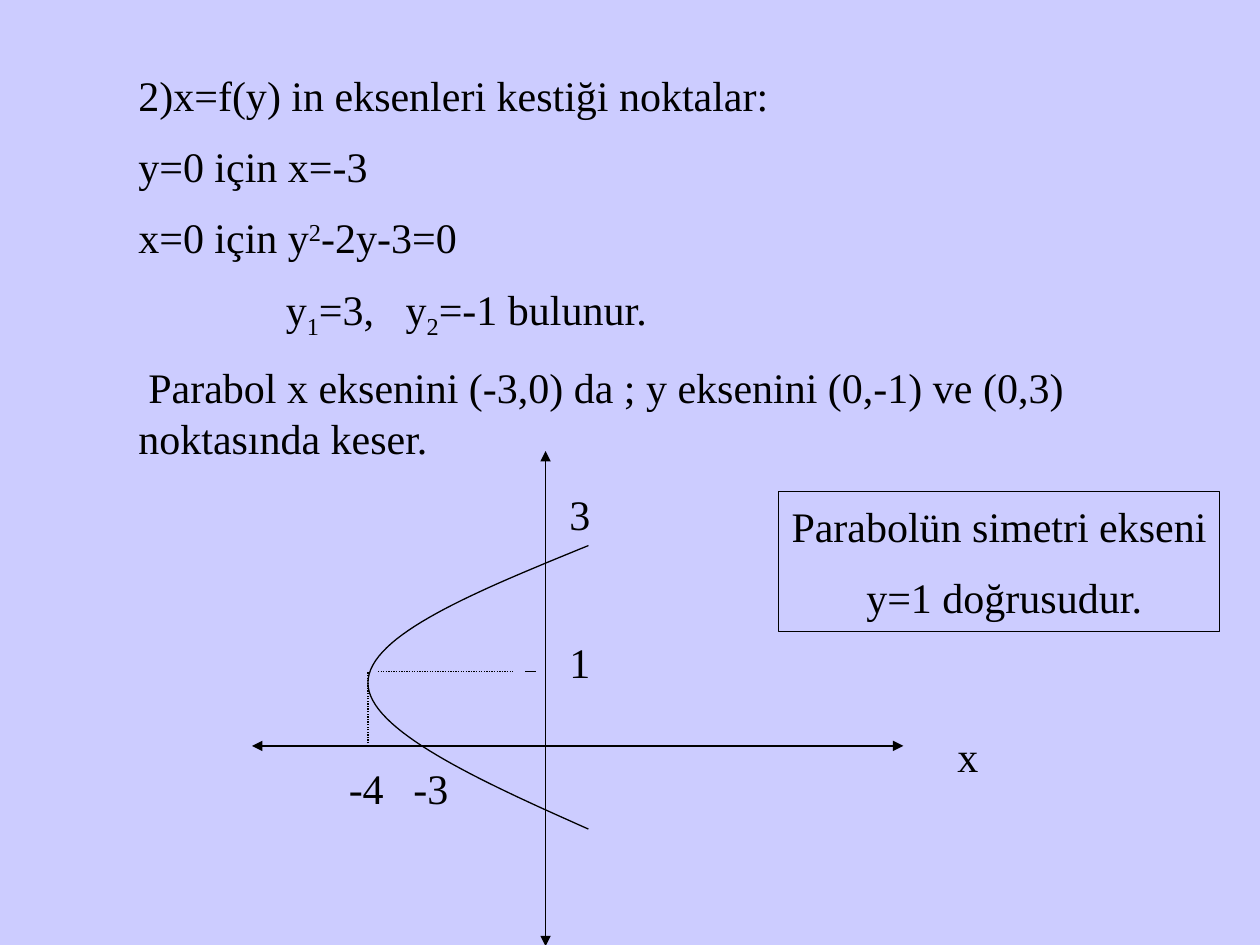
from lxml.etree import SubElement
from pptx import Presentation
from pptx.dml.color import RGBColor
from pptx.enum.dml import MSO_LINE
from pptx.enum.shapes import MSO_CONNECTOR, MSO_SHAPE
from pptx.enum.text import MSO_ANCHOR, PP_ALIGN
from pptx.oxml.ns import qn
from pptx.util import Inches, Pt

BLACK = "000000"
LAVENDER = "CCCCFF"
FONT = "Times New Roman"
PLAIN = {}
SUPER = {"baseline": "30000"}
SUB = {"baseline": "-25000"}
WIDE = {"spc": "1200"}


def color(hex_code):
    return RGBColor.from_string(hex_code)


def style_line(line, dash=None):
    line.color.rgb = color(BLACK)
    line.width = Pt(0.75)
    if dash:
        line.dash_style = dash


def set_indent(paragraph, margin=0, first=0):
    """Set the left margin and first-line indent, in inches."""
    props = paragraph._p.get_or_add_pPr()
    props.set("marL", str(Inches(margin)))
    props.set("indent", str(Inches(first)))


def write(frame, lines, size=24, align=PP_ALIGN.LEFT, anchor=MSO_ANCHOR.TOP,
          wrap=True, indents=None):
    """Write lines, each a string or a list of (text, run attributes)."""
    frame.word_wrap = wrap
    frame.vertical_anchor = anchor
    for index, line in enumerate(lines):
        paragraph = frame.paragraphs[0] if index == 0 else frame.add_paragraph()
        paragraph.alignment = align
        if index:
            paragraph.space_before = Pt(size / 2)
        if indents and index in indents:
            set_indent(paragraph, **indents[index])
        for text, attributes in [(line, PLAIN)] if isinstance(line, str) else line:
            run = paragraph.add_run()
            run.text = text
            run.font.name = FONT
            run.font.size = Pt(size)
            run.font.color.rgb = color(BLACK)
            for name, value in attributes.items():
                run._r.get_or_add_rPr().set(name, value)


def add_text(slide, box, lines, **text_format):
    frame = slide.shapes.add_textbox(*map(Inches, box)).text_frame
    write(frame, lines, **text_format)


def add_line(slide, start, end, dash=None, arrow=False):
    line = slide.shapes.add_connector(
        MSO_CONNECTOR.STRAIGHT, *map(Inches, start + end))
    style_line(line.line, dash)
    if arrow:
        SubElement(line.line._get_or_add_ln(), qn("a:tailEnd"), type="triangle")
    SubElement(line._element.spPr, qn("a:effectLst"))


def bezier(points, steps=32):
    """Return points in EMU along a cubic Bezier curve given in inches."""
    curve = []
    for step in range(steps + 1):
        t = step / steps
        weights = ((1 - t) ** 3, 3 * t * (1 - t) ** 2, 3 * t * t * (1 - t), t ** 3)
        curve.append(tuple(Inches(sum(w * p[axis] for w, p in zip(weights, points)))
                           for axis in (0, 1)))
    return curve


def add_parabola(slide):
    vertex = (2.92, 5.42)
    upper = bezier([(4.67, 4.33), (3.79, 4.69), (2.92, 5.04), vertex])
    lower = bezier([vertex, (2.92, 5.79), (3.79, 6.19), (4.67, 6.58)])
    start, *rest = upper + lower[1:]
    builder = slide.shapes.build_freeform(*start)
    builder.add_line_segments(rest, close=False)
    parabola = builder.convert_to_shape()
    parabola.shadow.inherit = False
    parabola.fill.background()
    style_line(parabola.line)


def add_framed_note(slide, box, lines, **text_format):
    note = slide.shapes.add_shape(MSO_SHAPE.RECTANGLE, *map(Inches, box))
    note.shadow.inherit = False
    note.fill.background()
    style_line(note.line)
    write(note.text_frame, lines, **text_format)


def add_graph(slide):
    axis_x, axis_y, symmetry_y = 4.33, 5.92, 5.33
    for start, end in (((axis_x, 4.51), (axis_x, 7.51)),
                       ((2.75, axis_y), (7.17, axis_y)),
                       ((2.83, axis_y), (2, axis_y)),
                       ((axis_x, 4.67), (axis_x, 3.58))):
        add_line(slide, start, end, arrow=True)

    dotted = MSO_LINE.ROUND_DOT
    add_line(slide, (2.92, axis_y), (2.92, symmetry_y), dash=dotted)
    add_line(slide, (3, symmetry_y), (4.08, symmetry_y), dash=dotted)
    add_line(slide, (4.25, symmetry_y), (4.17, symmetry_y))
    add_parabola(slide)

    for label, left, top, width in (("3", 4.42, 3.83, 0.58),
                                    ("1", 4.42, 5, 0.67),
                                    ("-4", 2.67, 6, 1),
                                    ("x", 7.5, 5.75, 0.67)):
        add_text(slide, (left, top, width, 0.5), [label])
    add_text(slide, (3.18, 6, 0.48, 0.5), ["-3"], align=PP_ALIGN.CENTER,
             anchor=MSO_ANCHOR.MIDDLE, wrap=False)


def main():
    deck = Presentation()
    deck.slide_width, deck.slide_height = Inches(10), Inches(7.5)
    slide = deck.slides.add_slide(deck.slide_layouts[6])
    slide.background.fill.solid()
    slide.background.fill.fore_color.rgb = color(LAVENDER)

    add_text(slide, (1, 0.5, 7.83, 5.09), [
        "2)x=f(y) in eksenleri kestiği noktalar:",
        "y=0 için x=-3",
        [("x=0 için y", PLAIN), ("2", SUPER), ("-2y-3=0", PLAIN)],
        [("y", PLAIN), ("1", SUB), ("=3,", PLAIN), (" ", WIDE),
         ("y", PLAIN), ("2", SUB), ("=-1 bulunur.", PLAIN)],
        "Parabol x eksenini (-3,0) da ; y eksenini (0,-1) ve (0,3) "
        "noktasında keser.",
    ], indents={3: {"margin": 1.17}, 4: {"first": 0.08}})
    add_graph(slide)
    add_framed_note(slide, (6.18, 3.9, 3.5, 1.11),
                    ["Parabolün simetri ekseni", "y=1 doğrusudur."],
                    align=PP_ALIGN.CENTER, anchor=MSO_ANCHOR.MIDDLE,
                    wrap=False, indents={1: {"margin": 0.08}})
    deck.save("out.pptx")


if __name__ == "__main__":
    main()
